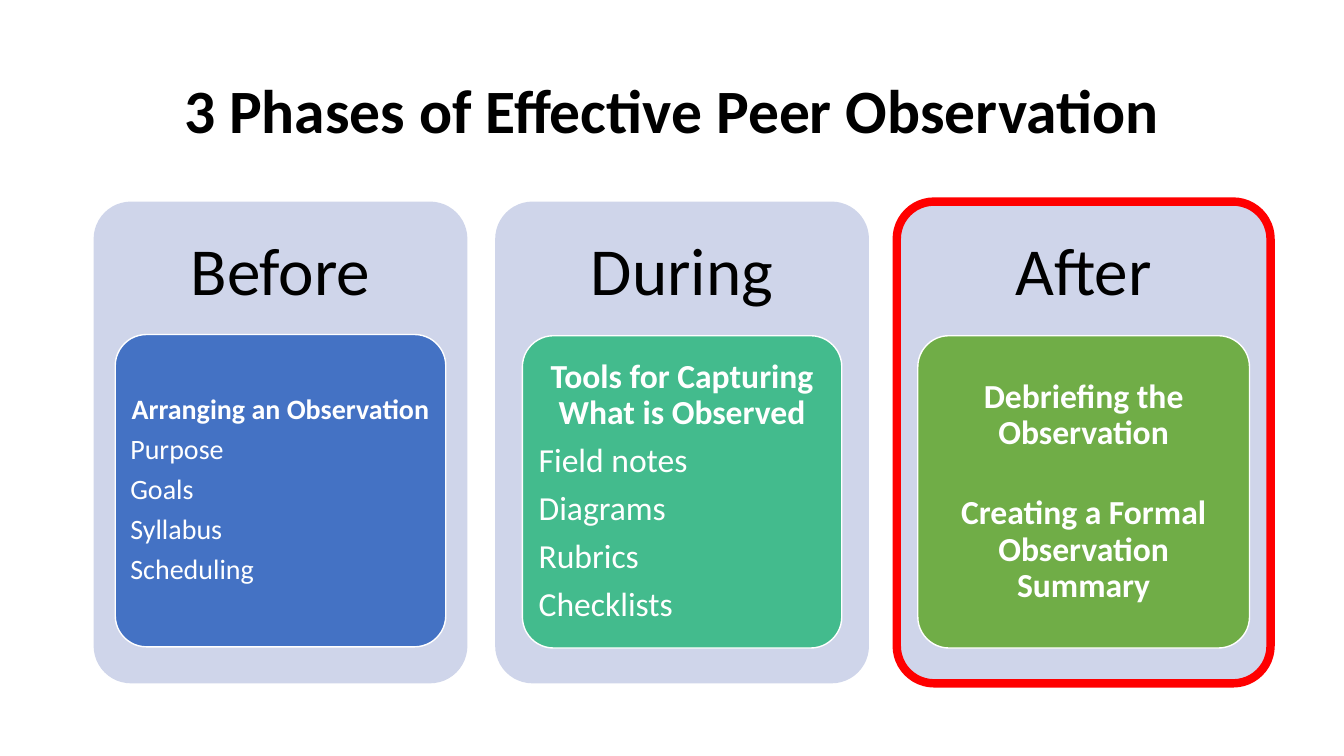
"""Build the slide on the three phases of effective peer observation."""
import pptx
import pptx.util
import pptx.dml.color
import pptx.enum.shapes
import pptx.enum.text
from pptx.util import Cm, Pt

TITLE = "3 Phases of Effective Peer Observation"
PHASES = [
    {"name": "Before", "colour": "4472C4", "outline": None, "width": 8.33, "top": 8.43,
     "size": 20, "inset": (0.15, 0.1), "heading_gap": 7,
     "headings": ["Arranging an Observation"],
     "items": ["Purpose", "Goals", "Syllabus", "Scheduling"]},
    {"name": "During", "colour": "43BB8D", "outline": None, "width": 8.05, "top": 8.46,
     "size": 24, "inset": (0.18, 0.13), "heading_gap": 8.4,
     "headings": ["Tools for Capturing What is Observed"],
     "items": ["Field notes", "Diagrams", "Rubrics", "Checklists"]},
    {"name": "After", "colour": "70AD47", "outline": "FF0000", "width": 8.36, "top": 8.46,
     "size": 24, "inset": (0.18, 0.13), "heading_gap": 31.6,
     "headings": ["Debriefing the Observation", "Creating a Formal Observation Summary"],
     "items": []},
]
THEME = {"font": "Calibri", "ink": "000000", "light": "FFFFFF", "card": "CFD5EA",
         "title": 44, "phase": 48, "line_spacing": 0.9, "after": 0.35,
         "corner": 0.1, "thin": 1, "thick": 6}
CARD_LEFT, CARD_TOP, CARD_WIDTH, CARD_HEIGHT, CARD_PITCH = 2.36, 5.08, 9.42, 12.14, 10.12
HEADER_HEIGHT, PANEL_HEIGHT = 3.63, 7.87


def rgb(code):
    return pptx.dml.color.RGBColor.from_string(code)


def set_frame(frame, inset):
    frame.word_wrap = True
    frame.vertical_anchor = pptx.enum.text.MSO_ANCHOR.MIDDLE
    frame.margin_left = frame.margin_right = Cm(inset[0])
    frame.margin_top = frame.margin_bottom = Cm(inset[1])


def write(frame, words, size, colour, bold=False, centred=True, after=0):
    align = pptx.enum.text.PP_ALIGN
    paragraph = frame.paragraphs[0]
    if paragraph.runs:
        paragraph = frame.add_paragraph()
    paragraph.alignment = align.CENTER if centred else align.LEFT
    paragraph.line_spacing = THEME["line_spacing"]
    paragraph.space_before = Pt(0)
    paragraph.space_after = Pt(after)
    run = paragraph.add_run()
    run.text = words
    run.font.name = THEME["font"]
    run.font.size = Pt(size)
    run.font.bold = bold
    run.font.color.rgb = rgb(colour)


def add_label(slide, box, words, size, inset, bold=False, after=0):
    label = slide.shapes.add_textbox(*map(Cm, box))
    set_frame(label.text_frame, inset)
    write(label.text_frame, words, size, THEME["ink"], bold, after=after)


def add_rounded(slide, box, fill, outline, weight):
    rounded = slide.shapes.add_shape(
        pptx.enum.shapes.MSO_SHAPE.ROUNDED_RECTANGLE, *map(Cm, box))
    rounded.adjustments[0] = THEME["corner"]
    rounded.shadow.inherit = False
    rounded.fill.solid()
    rounded.fill.fore_color.rgb = rgb(fill)
    if outline:
        rounded.line.color.rgb = rgb(outline)
        rounded.line.width = Pt(weight)
    else:
        rounded.line.fill.background()
    return rounded


def add_phase(slide, index, phase):
    left = CARD_LEFT + index * CARD_PITCH
    add_rounded(slide, (left, CARD_TOP, CARD_WIDTH, CARD_HEIGHT),
                THEME["card"], phase["outline"], THEME["thick"])
    add_label(slide, (left, CARD_TOP, CARD_WIDTH, HEADER_HEIGHT), phase["name"],
              THEME["phase"], (0.51, 0.51), after=THEME["phase"] * THEME["after"])
    panel_left = left + (CARD_WIDTH - phase["width"]) / 2
    panel = add_rounded(slide, (panel_left, phase["top"], phase["width"], PANEL_HEIGHT),
                        phase["colour"], THEME["light"], THEME["thin"])
    frame, size = panel.text_frame, phase["size"]
    set_frame(frame, phase["inset"])
    gap = size * THEME["after"]
    for heading in phase["headings"]:
        last = heading == phase["headings"][-1]
        write(frame, heading, size, THEME["light"], bold=True,
              after=gap if last else phase["heading_gap"])
    for item in phase["items"]:
        write(frame, item, size, THEME["light"], centred=False, after=gap)


def main():
    deck = pptx.Presentation()
    deck.slide_width, deck.slide_height = Cm(33.87), Cm(19.05)
    slide = deck.slides.add_slide(deck.slide_layouts[6])
    add_label(slide, (2.33, 1.01, 29.21, 3.68), TITLE, THEME["title"], (0.25, 0.13), bold=True)
    for index, phase in enumerate(PHASES):
        add_phase(slide, index, phase)
    deck.save("out.pptx")


if __name__ == "__main__":
    main()
